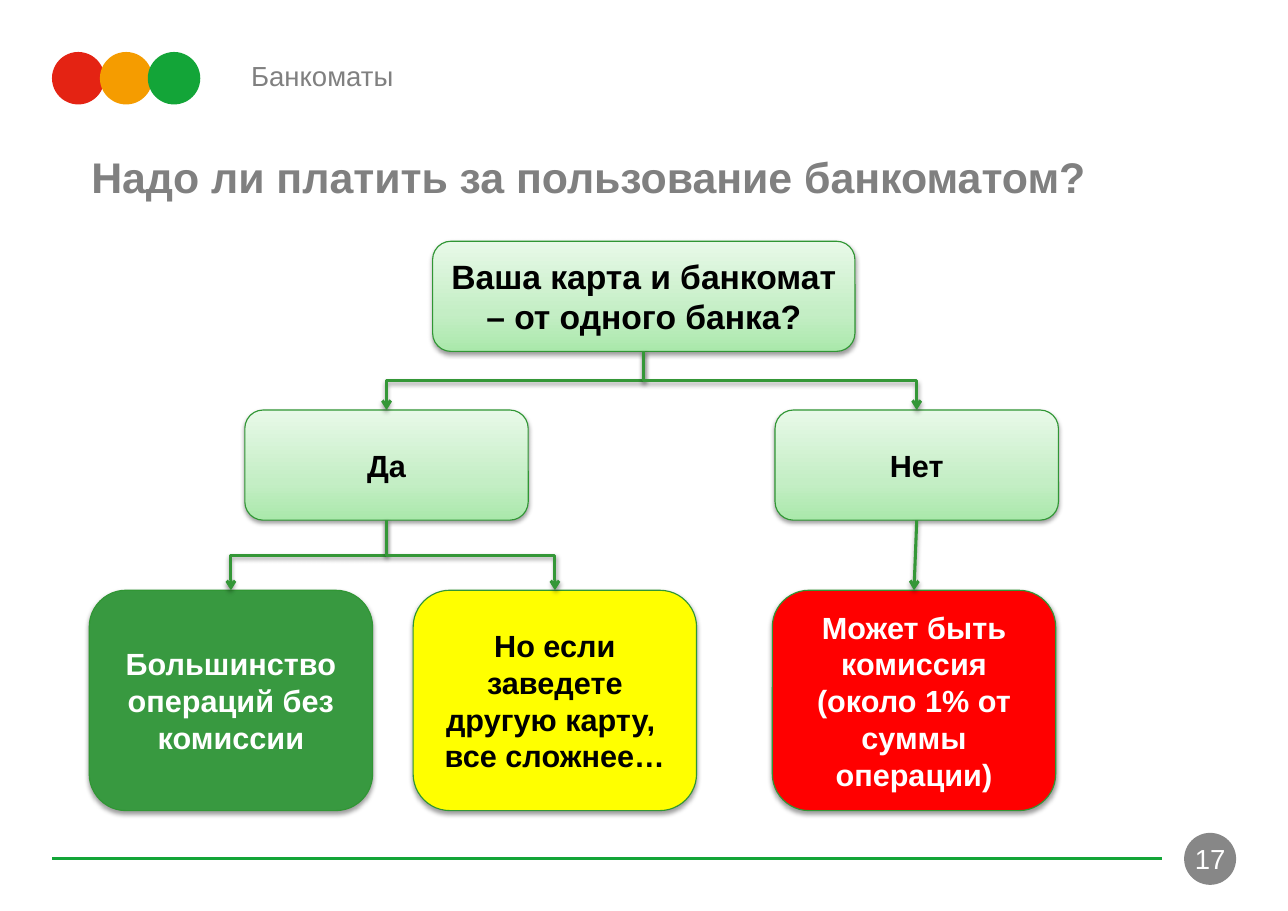
from lxml.etree import SubElement
from pptx import Presentation
from pptx.dml.color import RGBColor
from pptx.enum.shapes import MSO_CONNECTOR as CXN, MSO_SHAPE as SHAPE
from pptx.enum.text import MSO_ANCHOR as ANCHOR, PP_ALIGN as ALIGN
from pptx.oxml.ns import qn
from pptx.util import Pt

RED = RGBColor(0xE4, 0x23, 0x13)
ORANGE = RGBColor(0xF5, 0x9C, 0x00)
GREEN = RGBColor(0x13, 0xA5, 0x38)
BADGE_GREY = RGBColor(0x87, 0x87, 0x87)
TEXT_GREY = RGBColor(0x80, 0x80, 0x80)
WHITE = RGBColor(0xFF, 0xFF, 0xFF)
BLACK = RGBColor(0x00, 0x00, 0x00)
BORDER = RGBColor(0x30, 0x96, 0x34)
ARROW = RGBColor(0x34, 0x97, 0x37)
FREE = RGBColor(0x38, 0x99, 0x40)
WARNING = RGBColor(0xFF, 0xFF, 0x00)
FEE = RGBColor(0xFF, 0x00, 0x00)
PALE_STOPS = [
    (0, RGBColor(0xAA, 0xE8, 0xAB)),
    (35, RGBColor(0xC4, 0xEE, 0xC5)),
    (100, RGBColor(0xE8, 0xF9, 0xE8)),
]

TOP, BOTTOM = 0, 2  # connection sites
NODE_W = 185.2
ANSWER_Y, RESULT_Y = 268, 385.8


def set_attrs(obj, values):
    for name, value in values.items():
        setattr(obj, name, value)


def write(sp, text, size, color, bold=False, align=ALIGN.LEFT, anchor=ANCHOR.TOP):
    tf = sp.text_frame
    set_attrs(tf, {"word_wrap": True, "vertical_anchor": anchor})
    p = tf.paragraphs[0]
    p.text = text
    p.alignment = align
    for r in p.runs:
        set_attrs(r.font, {"name": "Arial", "size": Pt(size), "bold": bold})
        r.font.color.rgb = color


def add_effects(sp, shadow=True):
    """Append the effect list, after fill and line have been set."""
    effects = SubElement(sp._element.spPr, qn("a:effectLst"))
    if shadow:
        outer = SubElement(effects, qn("a:outerShdw"), blurRad=str(Pt(3.1)),
                           dist=str(Pt(1.6)), dir="5400000", rotWithShape="0")
        clr = SubElement(outer, qn("a:srgbClr"), val=str(BLACK))
        SubElement(clr, qn("a:alpha"), val="38000")


def fill_pale_gradient(sp):
    sp.fill.gradient()
    sp.fill.gradient_angle = 90
    stops = sp._element.spPr.find(".//" + qn("a:gsLst"))
    for gs in list(stops):
        stops.remove(gs)
    for pos, color in PALE_STOPS:
        gs = SubElement(stops, qn("a:gs"), pos=str(pos * 1000))
        SubElement(gs, qn("a:srgbClr"), val=str(color))


def add_text(s, x, y, w, h, text, size, bold=False):
    sp = s.shapes.add_textbox(Pt(x), Pt(y), Pt(w), Pt(h))
    write(sp, text, size, TEXT_GREY, bold)


def add_circle(s, x, y, d, color):
    sp = s.shapes.add_shape(SHAPE.OVAL, Pt(x), Pt(y), Pt(d), Pt(d))
    sp.shadow.inherit = False
    sp.fill.solid()
    sp.fill.fore_color.rgb = color
    sp.line.fill.background()
    return sp


def add_node(s, x, y, w, h, text, size=20, fill=None, color=BLACK):
    """Add a rounded box; without a fill it gets the pale gradient."""
    sp = s.shapes.add_shape(SHAPE.ROUNDED_RECTANGLE, Pt(x), Pt(y), Pt(w), Pt(h))
    if fill is None:
        fill_pale_gradient(sp)
    else:
        sp.fill.solid()
        sp.fill.fore_color.rgb = fill
    sp.line.color.rgb = BORDER
    sp.line.width = Pt(0.75)
    add_effects(sp)
    write(sp, text, size, color, True, ALIGN.CENTER, ANCHOR.MIDDLE)
    return sp


def style_line(cxn, color):
    cxn.line.color.rgb = color
    cxn.line.width = Pt(2)


def turn_elbow(cxn):
    """Rotate an elbow so that it leaves and arrives vertically."""
    x, y, w, h = cxn.left, cxn.top, cxn.width, cxn.height
    leftward = cxn.begin_x > cxn.end_x
    set_attrs(cxn, {"left": x + (w - h) // 2, "top": y + (h - w) // 2,
                    "width": h, "height": w})
    xfrm = cxn._element.spPr.find(qn("a:xfrm"))
    xfrm.set("rot", "5400000" if leftward else "16200000")
    xfrm.set("flipH", "0" if leftward else "1")


def add_arrow(s, parent, child, kind=CXN.ELBOW):
    cxn = s.shapes.add_connector(kind, 0, 0, 0, 0)
    cxn.begin_connect(parent, BOTTOM)
    cxn.end_connect(child, TOP)
    if kind == CXN.ELBOW:
        turn_elbow(cxn)
    style_line(cxn, ARROW)
    ln = cxn._element.spPr.find(qn("a:ln"))
    SubElement(ln, qn("a:tailEnd"), type="arrow")
    add_effects(cxn)


def add_frame(s):
    """Add the traffic-light circles, the bottom rule and the page number."""
    for i, color in enumerate((RED, ORANGE, GREEN)):
        add_circle(s, 34 + i * 31.3, 34, 34.3, color)
    rule = s.shapes.add_connector(CXN.STRAIGHT, Pt(34), Pt(561.3), Pt(759.4), Pt(561.3))
    style_line(rule, GREEN)
    add_effects(rule, shadow=False)
    badge = add_circle(s, 773.8, 544.3, 34, BADGE_GREY)
    sides = ("left", "top", "right", "bottom")
    set_attrs(badge.text_frame, {f"margin_{side}": 0 for side in sides})
    write(badge, "17", 18, WHITE, align=ALIGN.CENTER, anchor=ANCHOR.MIDDLE)


def add_decision_tree(s):
    question = add_node(s, 282.7, 157.7, 276, 72,
                        "Ваша карта и банкомат – от одного банка?", 22)
    yes = add_node(s, 160, ANSWER_Y, NODE_W, 72, "Да")
    no = add_node(s, 506.5, ANSWER_Y, NODE_W, 72, "Нет")
    free, harder, fee = [
        add_node(s, x, RESULT_Y, NODE_W, 144, text, fill=fill, color=color)
        for x, text, fill, color in (
            (58.3, "Большинство операций без комиссии", FREE, WHITE),
            (270, "Но если заведете другую карту, \vвсе сложнее…", WARNING, BLACK),
            (504.7, "Может быть комиссия (около 1% от суммы операции)", FEE, WHITE),
        )
    ]
    for parent, child in ((question, yes), (question, no), (yes, free), (yes, harder)):
        add_arrow(s, parent, child)
    add_arrow(s, no, fee, CXN.STRAIGHT)


def main():
    prs = Presentation()
    set_attrs(prs, {"slide_width": Pt(841.7), "slide_height": Pt(595.4)})
    s = prs.slides.add_slide(prs.slide_layouts[6])
    add_frame(s)
    add_text(s, 157, 34.7, 540, 42, "Банкоматы", 18)
    add_text(s, 52.6, 95, 720, 45, "Надо ли платить за пользование банкоматом?", 28, True)
    add_decision_tree(s)
    prs.save("out.pptx")


if __name__ == "__main__":
    main()
